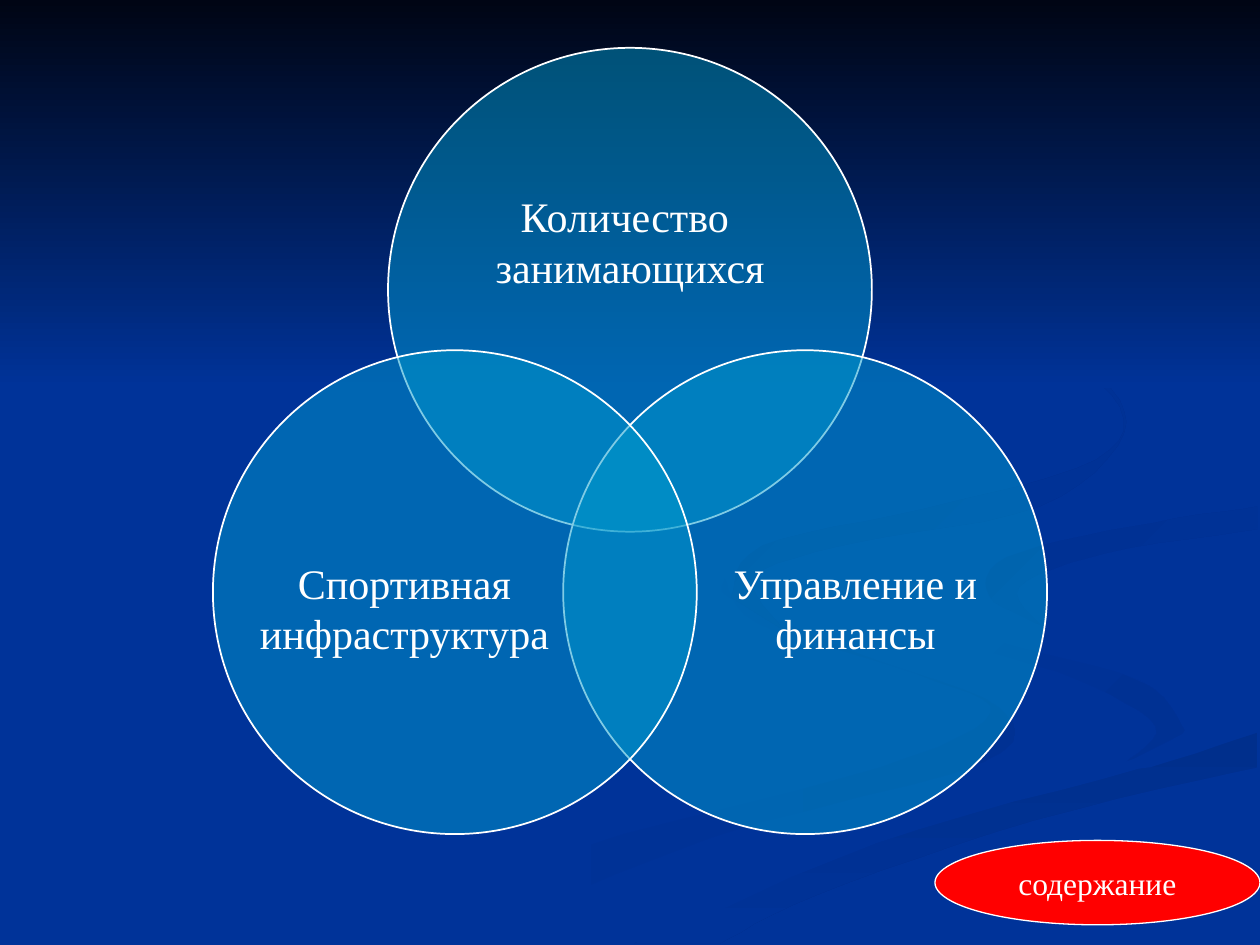
from dataclasses import dataclass

from pptx import Presentation
from pptx.dml.color import RGBColor
from pptx.enum.shapes import MSO_SHAPE
from pptx.enum.text import MSO_ANCHOR, PP_ALIGN
from pptx.oxml.ns import qn
from pptx.util import Pt
from lxml import etree

PX = 9144  # EMU per px, 100 px to the inch
W, H = 1000, 750
RADIUS = 192
STEPS = 6  # straight pieces between two knots of a swirl
FONT = "Times New Roman"
OVAL, RECT = MSO_SHAPE.OVAL, MSO_SHAPE.RECTANGLE
CENTER, MIDDLE = PP_ALIGN.CENTER, MSO_ANCHOR.MIDDLE
COLORS = {
    "back": "003399", "night": "000514", "shade": "003193", "shade_dark": "002F8C",
    "shade_mid": "003091", "shade_deep": "002F8E",
    "circle": "0099CC", "button": "FF0000", "white": "FFFFFF",
}
Point = tuple[int, int]


@dataclass
class Swirl:
    """Ribbon between two smooth edges, the second running back to the first."""
    start: str
    end: str
    angle: int  # clockwise degrees
    there: list[Point]
    back: list[Point]


@dataclass
class Circle:
    cx: int
    cy: int
    label: str
    box: tuple[int, int, int, int]


SWIRLS = [
    Swirl("back", "shade", 0,
          [(575, 459), (602, 495), (728, 535), (786, 566), (699, 609), (458, 674), (300, 749)],
          [(361, 749), (564, 665), (780, 605), (792, 561), (682, 519), (583, 477), (575, 459)]),
    Swirl("back", "shade", 45,
          [(724, 464), (755, 505), (854, 539), (917, 576), (894, 605)],
          [(941, 581), (905, 540), (792, 509), (733, 483), (724, 464)]),
    Swirl("shade_dark", "back", 90,
          [(503, 749), (630, 693), (764, 647), (903, 610), (998, 581)],
          [(998, 609), (821, 651), (649, 710), (571, 749)]),
    Swirl("back", "back", 0,
          [(725, 464), (759, 498), (905, 540), (943, 575), (892, 605), (663, 668), (477, 749)],
          [(519, 747), (696, 669), (904, 610), (999, 581)]),
    Swirl("back", "back", 0,
          [(725, 464), (759, 498), (905, 540), (943, 575), (904, 610), (999, 581)],
          [(999, 538), (832, 498), (781, 463), (850, 427), (999, 402), (999, 387),
           (851, 411), (742, 439), (725, 464)]),
    Swirl("shade_mid", "back", 45,
          [(826, 496), (785, 473), (799, 442), (898, 418), (998, 402)],
          [(998, 420), (878, 439), (809, 466), (826, 496)]),
    Swirl("shade_deep", "back", 45,
          [(762, 233), (864, 291), (892, 344), (825, 402), (683, 430), (599, 457), (622, 500)],
          [(580, 474), (605, 433), (733, 404), (870, 365), (882, 313), (762, 233)]),
]
CIRCLES = [
    Circle(500, 230, "Количество \nзанимающихся", (359, 105, 282, 173)),
    Circle(639, 470, "Управление и финансы", (564, 377, 230, 211)),
    Circle(361, 470, "Спортивная инфраструктура", (206, 377, 230, 211)),
]


def rgb(name: str) -> RGBColor:
    return RGBColor.from_string(COLORS[name])


def emu(*lengths: int) -> list[int]:
    return [n * PX for n in lengths]


def smooth(knots: list[Point]) -> list[Point]:
    """Points of a Catmull-Rom curve through the knots."""
    ends = [knots[0], *knots, knots[-1]]
    points = [knots[0]]
    for a, b, c, d in zip(ends, ends[1:], ends[2:], ends[3:]):
        for step in range(1, STEPS + 1):
            t = step / STEPS
            points.append(tuple(
                round(q + t * (r - p + t * (2 * p - 5 * q + 4 * r - s
                                            + t * (3 * q - p - 3 * r + s))) / 2)
                for p, q, r, s in zip(a, b, c, d)))
    return points


def fill_solid(fill, color: str) -> None:
    fill.solid()
    fill.fore_color.rgb = rgb(color)


def fill_gradient(sp, start: str, end: str, angle: int) -> None:
    """Fill without outline; python-pptx counts the angle counter-clockwise."""
    sp.shadow.inherit = False
    sp.line.fill.background()
    sp.fill.gradient()
    sp.fill.gradient_angle = (360 - angle) % 360
    for stop, color in zip(sp.fill.gradient_stops, (start, end)):
        stop.color.rgb = rgb(color)


def write(tf, text: str, size: int) -> None:
    tf.text = text
    tf.vertical_anchor = MIDDLE
    for p in tf.paragraphs:
        p.alignment = CENTER
        for r in p.runs:
            r.font.size = Pt(size)
            r.font.name = FONT
            r.font.color.rgb = rgb("white")


def add_swirl(slide, swirl: Swirl) -> None:
    points = smooth(swirl.there) + smooth(swirl.back)
    builder = slide.shapes.build_freeform(*points[0], scale=PX)
    builder.add_line_segments(points[1:], close=True)
    fill_gradient(builder.convert_to_shape(), swirl.start, swirl.end, swirl.angle)


def add_oval(slide, box: tuple[int, int, int, int], color: str, line: float):
    sp = slide.shapes.add_shape(OVAL, *emu(*box))
    sp.shadow.inherit = False
    fill_solid(sp.fill, color)
    sp.line.color.rgb = rgb("white")
    sp.line.width = Pt(line)
    return sp


def add_circle(slide, circle: Circle) -> None:
    """Half-transparent circle with its label in a separate text box."""
    box = (circle.cx - RADIUS, circle.cy - RADIUS, 2 * RADIUS, 2 * RADIUS)
    sp = add_oval(slide, box, "circle", 1)
    color = sp._element.spPr.find(qn("a:solidFill")).find(qn("a:srgbClr"))
    etree.SubElement(color, qn("a:alpha"), val="50000")

    tf = slide.shapes.add_textbox(*emu(*circle.box)).text_frame
    tf.word_wrap = True
    tf.margin_left = tf.margin_right = tf.margin_top = tf.margin_bottom = 0
    write(tf, circle.label, 24)


def main() -> None:
    prs = Presentation()
    prs.slide_width, prs.slide_height = emu(W, H)
    slide = prs.slides.add_slide(prs.slide_layouts[6])
    fill_solid(slide.background.fill, "back")

    for swirl in SWIRLS:
        add_swirl(slide, swirl)
    sky = slide.shapes.add_shape(RECT, *emu(0, 0, W, 308))
    fill_gradient(sky, "night", "back", 90)

    for circle in CIRCLES:
        add_circle(slide, circle)
    button = add_oval(slide, (742, 667, 258, 67), "button", 0.75)
    button.text_frame.word_wrap = False
    write(button.text_frame, "содержание", 18)

    prs.save("out.pptx")


if __name__ == "__main__":
    main()
